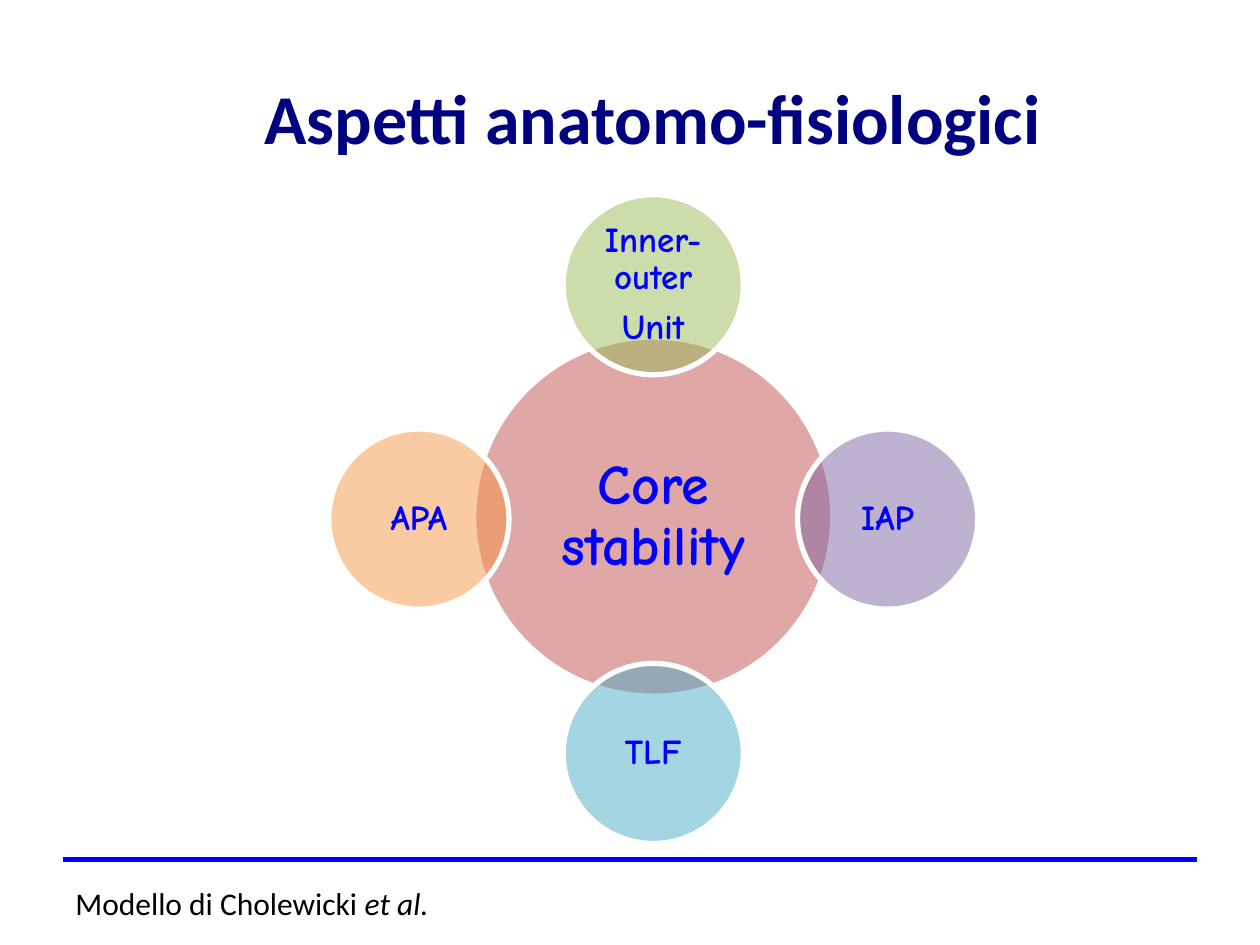
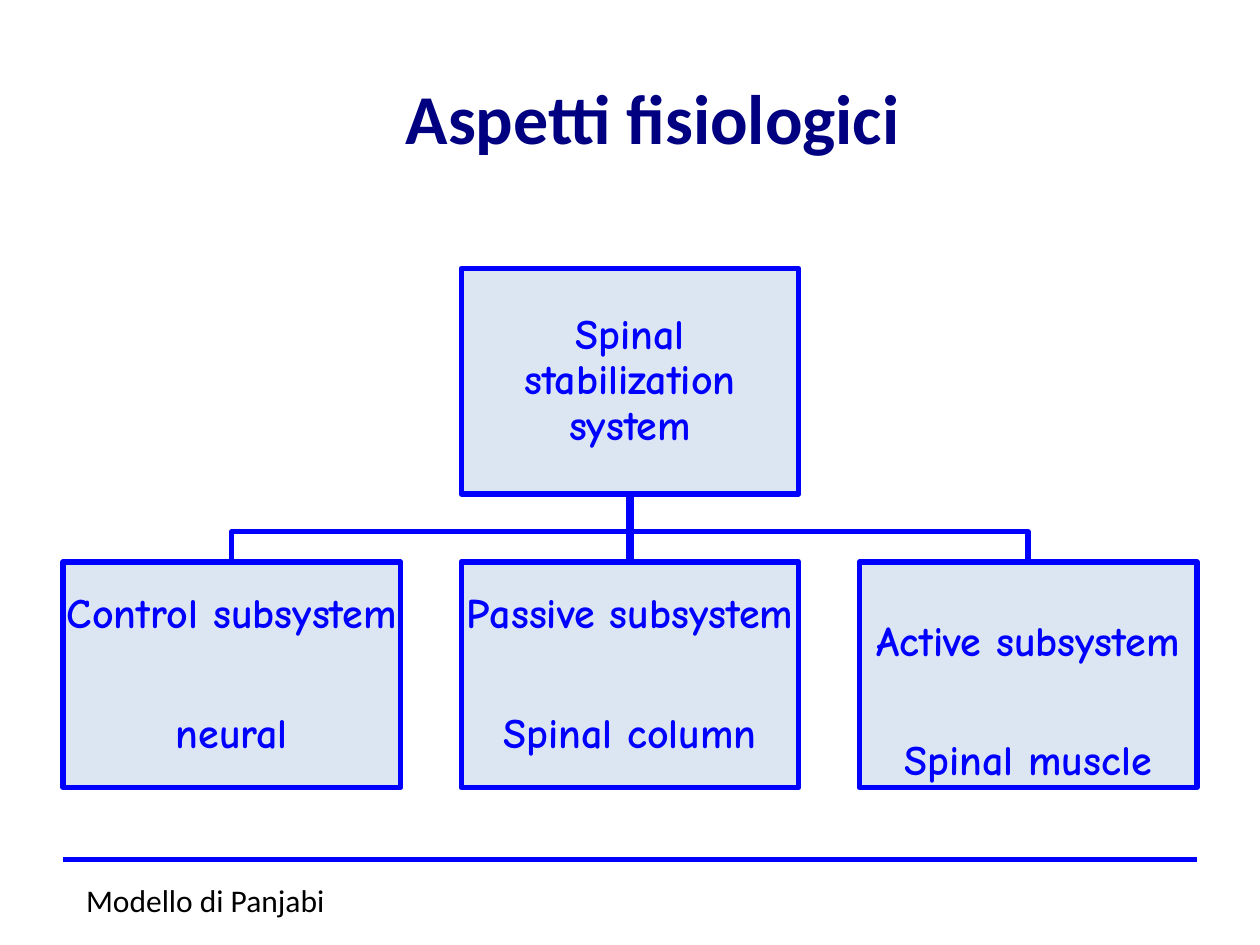
from math import cos, radians, sin

from lxml import etree
from pptx import Presentation
from pptx.dml.color import RGBColor
from pptx.enum.shapes import MSO_CONNECTOR as CONNECTOR, MSO_SHAPE as SHAPE
from pptx.enum.text import MSO_ANCHOR as ANCHOR, PP_ALIGN as ALIGN
from pptx.oxml.ns import qn
from pptx.util import Inches, Pt

NAVY = RGBColor(0x00, 0x00, 0x80)
BLUE = RGBColor(0x00, 0x00, 0xFF)
PALE_BLUE = RGBColor(0xDC, 0xE6, 0xF2)
WHITE = RGBColor(0xFF, 0xFF, 0xFF)
BLACK = RGBColor(0x00, 0x00, 0x00)
RED = RGBColor(0xC0, 0x50, 0x4D)
GREEN = RGBColor(0x9B, 0xBB, 0x59)
PURPLE = RGBColor(0x80, 0x64, 0xA2)
AQUA = RGBColor(0x4B, 0xAC, 0xC6)
ORANGE = RGBColor(0xF7, 0x96, 0x46)

HEADING_FONT = "Calibri"
DIAGRAM_FONT = "Comic Neue"
LINE_WIDTH = 3


def style_font(font, name, size, color, bold=False):
    font.name, font.size, font.bold = name, Pt(size), bold
    font.color.rgb = color


def add_line(slide, start, end, width=LINE_WIDTH):
    line = slide.shapes.add_connector(
        CONNECTOR.STRAIGHT, *(Inches(v) for v in (*start, *end)))
    line.line.color.rgb = BLUE
    line.line.width = Pt(width)
    etree.SubElement(line._element.spPr, qn("a:effectLst"))
    return line


def add_node(slide, kind, box, lines, size, fill, outline, inset, gap):
    """Draw a diagram shape with its label; gap is the space between lines."""
    node = slide.shapes.add_shape(kind, *(Inches(v) for v in box))
    node.shadow.inherit = False
    node.fill.solid()
    node.fill.fore_color.rgb = fill
    node.line.color.rgb = outline
    node.line.width = Pt(LINE_WIDTH)
    frame = node.text_frame
    frame.word_wrap = True
    frame.vertical_anchor = ANCHOR.MIDDLE
    frame.margin_left = frame.margin_right = Inches(inset)
    frame.margin_top = frame.margin_bottom = Inches(inset)
    frame.text = "\n".join(lines)
    for paragraph in frame.paragraphs:
        paragraph.alignment = ALIGN.CENTER
        paragraph.line_spacing = 0.9
        for run in paragraph.runs:
            style_font(run.font, DIAGRAM_FONT, size, BLUE, bold=True)
    for paragraph in frame.paragraphs[1:]:
        paragraph.space_before = Pt(gap)
    return node


def add_base_slide(prs, heading):
    slide = prs.slides.add_slide(prs.slide_layouts[5])
    title = slide.shapes.title
    title.left, title.top = Inches(1.28), Inches(0.3)
    title.width, title.height = Inches(7.8), Inches(1.25)
    title.text_frame.text = heading
    title.text_frame.vertical_anchor = ANCHOR.MIDDLE
    paragraph = title.text_frame.paragraphs[0]
    paragraph.alignment = ALIGN.CENTER
    style_font(paragraph.runs[0].font, HEADING_FONT, 40, NAVY, bold=True)
    add_line(slide, (0.5, 6.82), (9.5, 6.82))
    return slide


def add_model_note(slide, box, text, italic_text="", align=ALIGN.LEFT):
    note = slide.shapes.add_textbox(*(Inches(v) for v in box))
    note.text_frame.word_wrap = False
    paragraph = note.text_frame.paragraphs[0]
    paragraph.alignment = align
    for part, italic in ((text, False), (italic_text, True)):
        if part:
            run = paragraph.add_run()
            run.text = part
            style_font(run.font, HEADING_FONT, 18, BLACK)
            run.font.italic = italic


def add_radial_venn(slide, box, hub_lines, satellites):
    """Place satellites clockwise from the top around a central hub."""
    left, top, width, height = box
    center_x, center_y = left + width / 2, top + height / 2
    hub_size, satellite_size = 2.85, 1.43
    orbit = (width - satellite_size) / 2

    def add_circle(x, y, diameter, lines, size, color, inset):
        circle_box = (x - diameter / 2, y - diameter / 2, diameter, diameter)
        circle = add_node(slide, SHAPE.OVAL, circle_box, lines, size,
                          color, WHITE, inset, gap=7)
        srgb = circle._element.spPr.find(qn("a:solidFill")).find(qn("a:srgbClr"))
        etree.SubElement(srgb, qn("a:alpha"), val="50000")

    add_circle(center_x, center_y - 0.02, hub_size, hub_lines, 32, RED, 0.04)
    for index, (lines, color) in enumerate(satellites):
        angle = radians(360 * index / len(satellites) - 90)
        add_circle(center_x + orbit * cos(angle), center_y + orbit * sin(angle),
                   satellite_size, lines, 20, color, 0.03)


def add_hierarchy(slide, box, system, subsystems):
    """Place the system over a row of its subsystems and link them."""
    left, top, width, height = box
    node_width, node_height = 2.68, 1.79
    center_x = left + width / 2
    system_bottom = top + node_height
    row_top = top + height - node_height
    elbow_y = system_bottom + 0.3
    step = (width - node_width) / (len(subsystems) - 1)
    lefts = [left + step * i for i in range(len(subsystems))]

    for node_left in lefts:
        node_x = node_left + node_width / 2
        if abs(node_x - center_x) < 0.01:
            continue
        builder = slide.shapes.build_freeform(
            Inches(center_x), Inches(system_bottom))
        bends = ((center_x, elbow_y), (node_x, elbow_y), (node_x, row_top))
        builder.add_line_segments(
            [(Inches(x), Inches(y)) for x, y in bends], close=False)
        branch = builder.convert_to_shape()
        branch.shadow.inherit = False
        branch.fill.background()
        branch.line.color.rgb = BLUE
        branch.line.width = Pt(LINE_WIDTH)
    trunk = add_line(slide, (center_x, system_bottom), (center_x, row_top), 4.5)

    def add_box(x, y, lines):
        return add_node(slide, SHAPE.RECTANGLE, (x, y, node_width, node_height),
                        lines, 24, PALE_BLUE, BLUE, inset=0.02, gap=42.5)

    system_node = add_box(center_x - node_width / 2, top, [system])
    subsystem_nodes = [add_box(x, row_top, lines)
                       for x, lines in zip(lefts, subsystems)]
    trunk.begin_connect(system_node, 2)
    trunk.end_connect(subsystem_nodes[len(subsystem_nodes) // 2], 0)
    subsystem_nodes[-1].text_frame.vertical_anchor = ANCHOR.BOTTOM


def build_cholewicki_slide(prs):
    slide = add_base_slide(prs, "Aspetti anatomo-fisiologici")
    add_radial_venn(slide, (2.61, 1.55, 5.15, 5.14), ["Core stability"], [
        (["Inner-outer", "Unit"], GREEN),
        (["IAP"], PURPLE),
        (["TLF"], AQUA),
        (["APA"], ORANGE),
    ])
    add_model_note(slide, (0.5, 6.97, 3.29, 0.4),
                   "Modello di Cholewicki ", "et al.")


def build_panjabi_slide(prs):
    slide = add_base_slide(prs, "Aspetti fisiologici")
    add_hierarchy(slide, (0.5, 2.13, 9, 4.12), "Spinal stabilization system", [
        ["Control subsystem", "neural"],
        ["Passive subsystem", "Spinal column"],
        ["Active subsystem", "Spinal muscle"],
    ])
    add_model_note(slide, (0.5, 6.94, 2.26, 0.4), "Modello di Panjabi",
                   align=ALIGN.CENTER)


def main():
    prs = Presentation()
    prs.slide_width, prs.slide_height = Inches(10), Inches(7.5)
    build_cholewicki_slide(prs)
    build_panjabi_slide(prs)
    prs.save("out.pptx")


if __name__ == "__main__":
    main()
